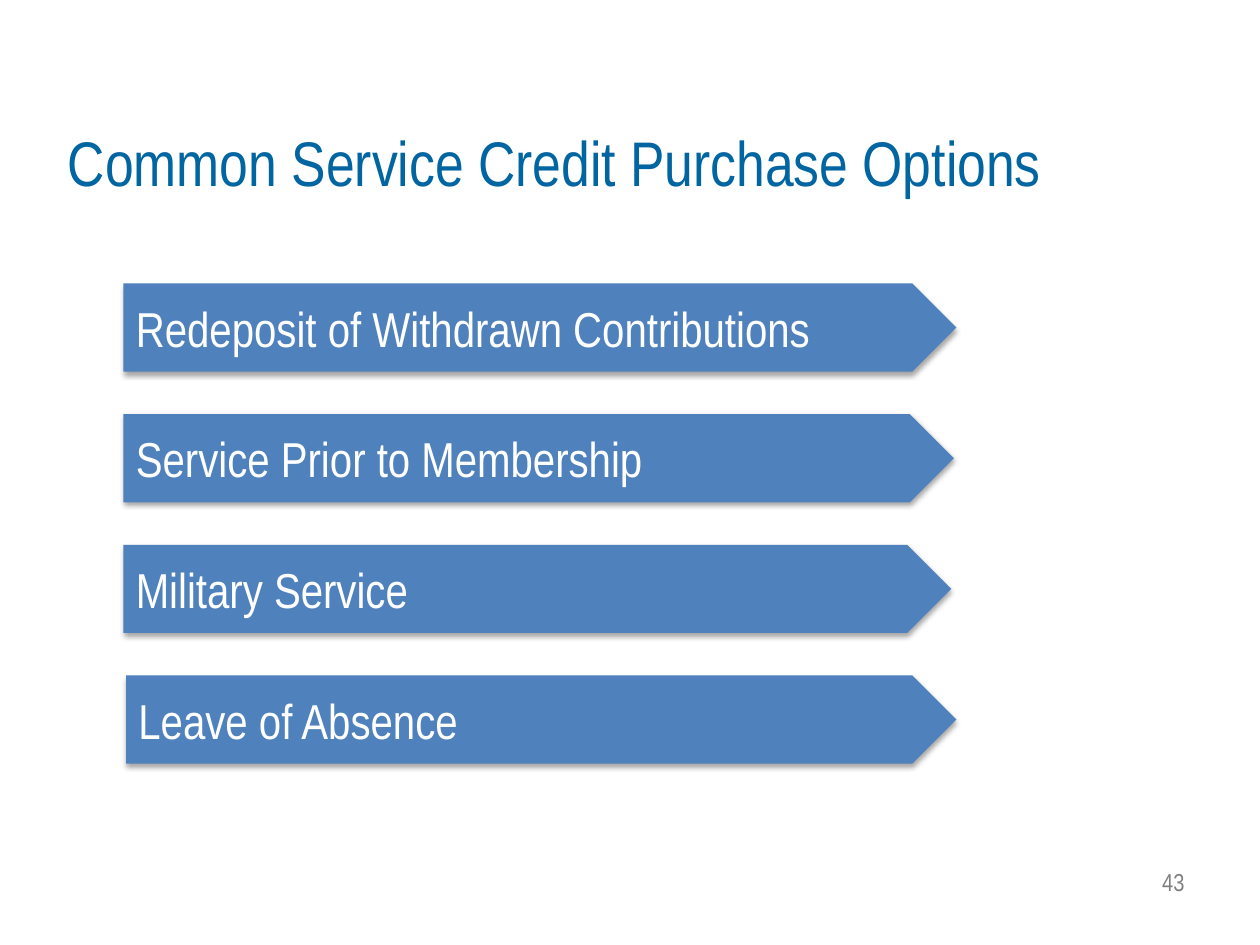
from lxml import etree
from pptx import Presentation
from pptx import util as u
from pptx.dml import color
from pptx.enum import shapes, text
from pptx.oxml import ns

# Grid of 100 columns by 75 rows on a 10 x 7.5 inch slide
CELL = 0.1
FONT = "Arial Narrow"
BLUE, BAR, GREY, WHITE, BLACK = "0065A1", "4F81BD", "808080", "FFFFFF", "000000"

# Label, left column, width in columns
BARS = [
    ("Redeposit of Withdrawn Contributions", 9.8, 66.1),
    ("Service Prior to Membership", 9.8, 65.9),
    ("Military Service", 9.8, 65.7),
    ("Leave of Absence", 10, 65.9),
]


def rgb(code):
    return color.RGBColor.from_string(code)


def grid(*cells):
    return [u.Inches(c * CELL) for c in cells]


def add_run(para, words, size, code):
    run = para.add_run()
    run.text = words
    run.font.name = FONT
    run.font.size = u.Pt(size)
    run.font.color.rgb = rgb(code)


def add_line(slide, box, words, size, code):
    """Add a one-line text box and return its frame."""
    frame = slide.shapes.add_textbox(*grid(*box)).text_frame
    frame.word_wrap = True
    add_run(frame.paragraphs[0], words, size, code)
    return frame


def add_shadow(shape):
    shape.shadow.inherit = False
    effects = shape._element.spPr.find(ns.qn("a:effectLst"))
    shadow = etree.SubElement(
        effects, ns.qn("a:outerShdw"), blurRad=str(u.Pt(3.1)),
        dist=str(u.Pt(1.8)), dir="5400000", rotWithShape="0")
    tint = etree.SubElement(shadow, ns.qn("a:srgbClr"), val=BLACK)
    etree.SubElement(tint, ns.qn("a:alpha"), val="35000")


def add_title(slide, box):
    frame = add_line(slide, box, "Common Service Credit Purchase Options", 36, BLUE)
    frame.margin_left = u.Inches(0.21)
    frame.paragraphs[0].line_spacing = 0.9


def add_bar(slide, box, label):
    bar = slide.shapes.add_shape(shapes.MSO_SHAPE.PENTAGON, *grid(*box))
    bar.fill.solid()
    bar.fill.fore_color.rgb = rgb(BAR)
    bar.line.fill.background()
    add_shadow(bar)
    frame = bar.text_frame
    frame.word_wrap = True
    frame.vertical_anchor = text.MSO_ANCHOR.MIDDLE
    para = frame.paragraphs[0]
    para.alignment = text.PP_ALIGN.LEFT
    add_run(para, label, 28, WHITE)


def add_bars(slide, top, pitch, height):
    for row, (label, left, width) in enumerate(BARS):
        add_bar(slide, (left, top + row * pitch, width, height), label)


def add_number(slide, box):
    frame = add_line(slide, box, "43", 14, GREY)
    frame.paragraphs[0].alignment = text.PP_ALIGN.RIGHT


def main():
    deck = Presentation()
    deck.slide_width, deck.slide_height = grid(100, 75)
    slide = deck.slides.add_slide(deck.slide_layouts[6])
    add_number(slide, (71.7, 68.3, 23.3, 3.4))
    add_title(slide, (3.3, 10, 106.7, 6.5))
    add_bars(slide, top=22.5, pitch=10.37, height=7)
    deck.save("out.pptx")


if __name__ == "__main__":
    main()
